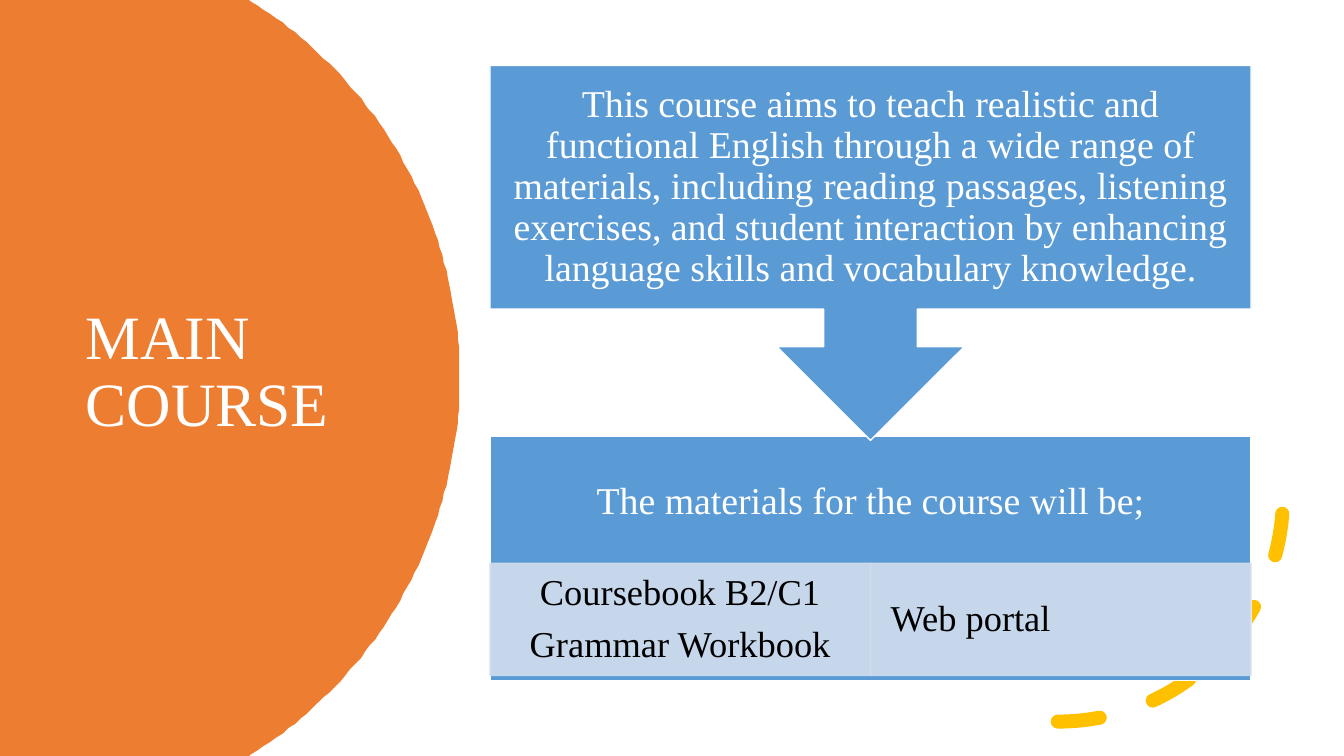
from math import cos, hypot, radians, sin

from pptx import Presentation
from pptx.dml.color import RGBColor
from pptx.enum import shapes, text
from pptx.oxml import ns, xmlchemy
from pptx.util import Pt

FONT = "Times New Roman"
COLORS = {
    "orange": "ED7D31",
    "blue": "5B9BD5",
    "pale": "D2DEEF",
    "gold": "FFC000",
    "white": "FFFFFF",
    "black": "000000",
}
AIM = (
    "This course aims to teach realistic and functional English through a wide "
    "range of materials, including reading passages, listening exercises, and "
    "student interaction by enhancing language skills and vocabulary knowledge."
)
MATERIALS = [
    (["Coursebook B2/C1", "Grammar Workbook"], text.PP_ALIGN.CENTER),
    (["Web portal"], text.PP_ALIGN.LEFT),
]


def color(name):
    return RGBColor.from_string(COLORS[name])


def paint(shape, fill, line, alpha=None):
    """Fill and outline a shape, optionally with an opacity in percent."""
    shape.shadow.inherit = False
    shape.fill.solid()
    shape.fill.fore_color.rgb = color(fill)
    shape.line.color.rgb = color(line)
    shape.line.width = Pt(1)
    if alpha is not None:
        for tint in shape.element.spPr.iter(ns.qn("a:srgbClr")):
            opacity = xmlchemy.OxmlElement("a:alpha")
            opacity.set("val", str(alpha * 1000))
            tint.append(opacity)


def write(shape, lines, size, name, align, inset=(0, 0)):
    """Set the paragraphs of a shape, centred vertically."""
    frame = shape.text_frame
    frame.word_wrap = True
    frame.vertical_anchor = text.MSO_ANCHOR.MIDDLE
    frame.margin_left = frame.margin_right = Pt(inset[0])
    frame.margin_top = frame.margin_bottom = Pt(inset[1])
    frame.text = "\n".join(lines)
    for para in frame.paragraphs:
        para.alignment = align
        para.line_spacing = 0.9
        para.space_after = Pt(round(size * 0.35))
        para.font.name = FONT
        para.font.size = Pt(size)
        para.font.color.rgb = color(name)


def add_caption(slide, box, line):
    """Place white centred text over a blue area."""
    caption = slide.shapes.add_textbox(*map(Pt, box))
    write(caption, [line], 27, "white", text.PP_ALIGN.CENTER, (15, 15))


def add_title_panel(slide, box):
    """Orange disc cut off by the slide edges, with the title on it."""
    left, top, width, height = box
    radius = 317.5
    center_x, center_y = left + width - radius, top + height / 2
    edge_x = center_x + (hypot(radius, 0) ** 2 - (height / 2) ** 2) ** 0.5
    rim = [
        (center_x + radius * cos(radians(angle)), center_y + radius * sin(radians(angle)))
        for angle in range(-58, 59)
    ]
    outline = [(edge_x, top), *rim, (edge_x, top + height), (left, top + height)]
    builder = slide.shapes.build_freeform(left, top, scale=Pt(1))
    builder.add_line_segments(outline, close=True)
    disc = builder.convert_to_shape()
    paint(disc, "orange", "orange")
    disc.line.fill.background()

    title = slide.shapes.title
    title.element.addprevious(disc.element)
    title.left, title.top = Pt(left + 54), Pt(top + 90.7)
    title.width, title.height = Pt(252), Pt(351.4)
    write(title, ["MAIN COURSE"], 44, "white", text.PP_ALIGN.LEFT, (7.2, 3.6))
    title.text_frame.paragraphs[0].space_after = Pt(0)


def add_dashed_arc(slide, box):
    """Thick dashed quarter circle at the lower right."""
    arc = slide.shapes.add_shape(shapes.MSO_SHAPE.ARC, *map(Pt, box))
    arc.shadow.inherit = False
    arc.fill.background()
    arc.line.color.rgb = color("gold")
    arc.line.width = Pt(10)
    arc.line.dash_style = 4  # MSO_LINE.DASH
    arc.element.spPr.find(ns.qn("a:ln")).set("cap", "rnd")
    arc.element.spPr.find(ns.qn("a:xfrm")).set("flipV", "1")


def add_materials(slide, box):
    """Blue block with a heading and a row of pale cells."""
    left, top, width, height = box
    block = slide.shapes.add_shape(shapes.MSO_SHAPE.RECTANGLE, *map(Pt, box))
    paint(block, "blue", "white")
    add_caption(slide, (left, top, width, height * 0.54),
                "The materials for the course will be;")
    cell_width = width / len(MATERIALS)
    for index, (lines, align) in enumerate(MATERIALS):
        cell = slide.shapes.add_shape(
            shapes.MSO_SHAPE.RECTANGLE, Pt(left + index * cell_width),
            Pt(top + height * 0.52), Pt(cell_width), Pt(height * 0.46))
        paint(cell, "pale", "pale", alpha=90)
        write(cell, lines, 26, "black", align, (14.4, 2.9))


def add_aim(slide, box):
    """Blue callout pointing down, with the course aim in its body."""
    left, top, width, height = box
    callout = slide.shapes.add_shape(shapes.MSO_SHAPE.UP_ARROW_CALLOUT, *map(Pt, box))
    callout.rotation = 180
    paint(callout, "blue", "white")
    add_caption(slide, (left, top, width, height * 0.65), AIM)


def main():
    deck = Presentation()
    deck.slide_width, deck.slide_height = Pt(960), Pt(540)
    slide = deck.slides.add_slide(deck.slide_layouts[5])
    add_title_panel(slide, (0, 0, 328.3, 540))
    add_dashed_arc(slide, (594.7, 193.7, 321.8, 321.8))
    add_materials(slide, (350, 311.8, 543.6, 174.2))
    add_aim(slide, (350, 46.8, 543.6, 267.8))
    deck.save("out.pptx")


if __name__ == "__main__":
    main()
